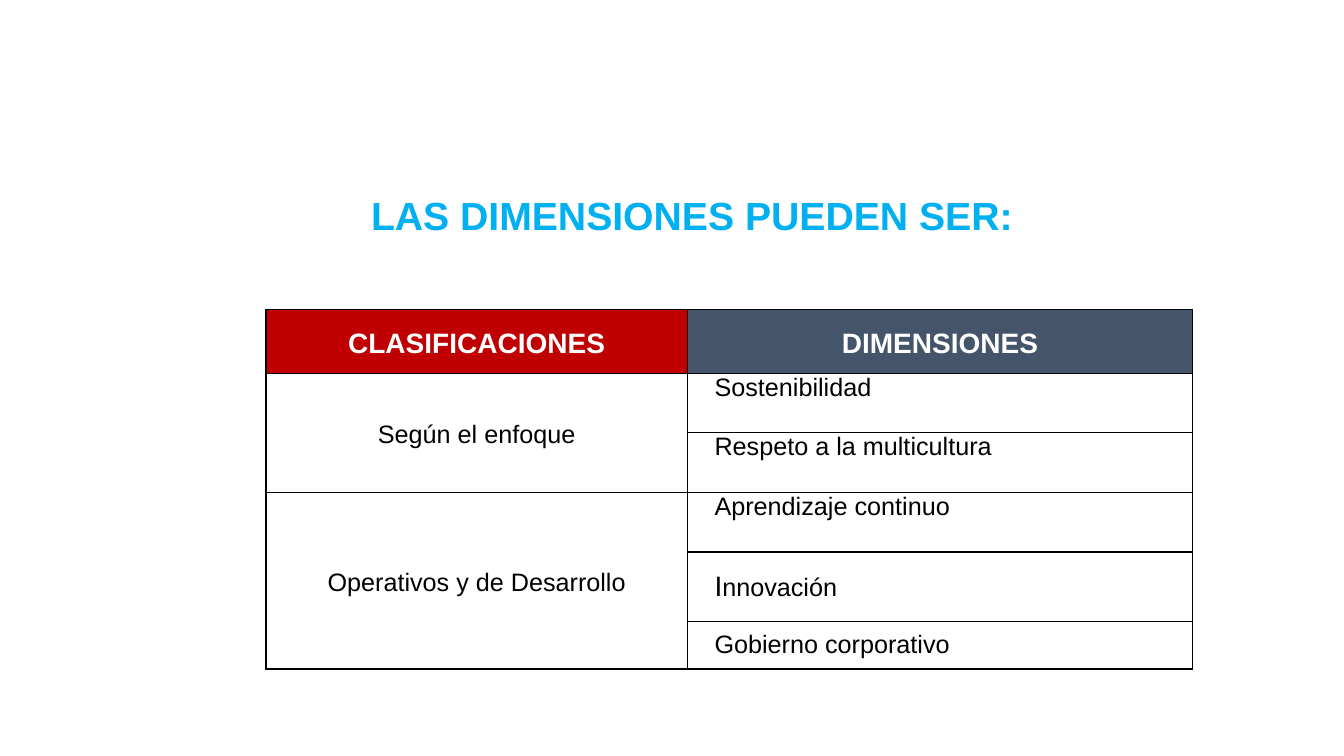
from dataclasses import dataclass

from lxml import etree
from pptx import Presentation
from pptx.dml.color import RGBColor
from pptx.enum.text import MSO_ANCHOR, MSO_AUTO_SIZE, PP_ALIGN
from pptx.oxml.ns import qn
from pptx.util import Pt

TOP, MIDDLE = MSO_ANCHOR.TOP, MSO_ANCHOR.MIDDLE
LEFT, CENTER = PP_ALIGN.LEFT, PP_ALIGN.CENTER
NO_AUTOFIT = MSO_AUTO_SIZE.NONE
TITLE_ONLY_LAYOUT = 5


@dataclass(frozen=True)
class Theme:
    font: str = "Arial"
    title_color: str = "00B0F0"
    header_colors: tuple = ("C00000", "44546A")
    header_text: str = "FFFFFF"
    text: str = "000000"
    border: str = "000000"
    title_size: int = 28
    header_size: int = 20
    body_size: int = 18


class SlideBuilder:
    def __init__(self, slide, theme):
        self.slide = slide
        self.theme = theme

    def format_run(self, run, size, color, bold=False):
        run.font.name = self.theme.font
        run.font.size = Pt(size)
        run.font.bold = bold
        run.font.color.rgb = RGBColor.from_string(color)

    def title(self, text, left, top, width, height):
        shape = self.slide.shapes.title
        shape.left, shape.top = Pt(left), Pt(top)
        shape.width, shape.height = Pt(width), Pt(height)
        frame = shape.text_frame
        frame.text = text
        frame.word_wrap = True
        frame.auto_size = NO_AUTOFIT
        frame.vertical_anchor = TOP
        paragraph = frame.paragraphs[0]
        paragraph.alignment = LEFT
        self.format_run(paragraph.runs[0], self.theme.title_size,
                        self.theme.title_color, bold=True)

    def table(self, left, top, column_widths, row_heights):
        """Add a bordered, unfilled table with no banding."""
        frame = self.slide.shapes.add_table(
            len(row_heights), len(column_widths), Pt(left), Pt(top),
            Pt(sum(column_widths)), Pt(sum(row_heights)))
        table = frame.table
        table.first_row = table.horz_banding = False
        for column, width in zip(table.columns, column_widths):
            column.width = Pt(width)
        for row, height in zip(table.rows, row_heights):
            row.height = Pt(height)
        for cell in table.iter_cells():
            cell.margin_left = cell.margin_right = Pt(5)
            cell.margin_top = cell.margin_bottom = 0
            self.borders(cell)
            cell.fill.background()
        return table

    def borders(self, cell):
        properties = cell._tc.get_or_add_tcPr()
        for side in ("a:lnL", "a:lnR", "a:lnT", "a:lnB"):
            line = etree.SubElement(properties, qn(side), w=str(Pt(1)))
            fill = etree.SubElement(line, qn("a:solidFill"))
            etree.SubElement(fill, qn("a:srgbClr"), val=self.theme.border)

    def centered_cell(self, cell, text, size, color, bold=False):
        cell.vertical_anchor = MIDDLE
        paragraph = cell.text_frame.paragraphs[0]
        paragraph.text = text
        paragraph.alignment = CENTER
        paragraph.line_spacing = 1.15
        self.format_run(paragraph.runs[0], size, color, bold)

    def header_cell(self, cell, text, fill):
        cell.fill.solid()
        cell.fill.fore_color.rgb = RGBColor.from_string(fill)
        self.centered_cell(cell, text, self.theme.header_size,
                           self.theme.header_text, bold=True)

    def indented_cell(self, cell, pieces, anchor):
        """Fill a cell with (text, size) pieces on one indented line."""
        cell.vertical_anchor = anchor
        paragraph = cell.text_frame.paragraphs[0]
        paragraph.alignment = LEFT
        paragraph._p.get_or_add_pPr().set("marL", str(Pt(14.4)))
        for text, size in pieces:
            run = paragraph.add_run()
            run.text = text
            self.format_run(run, size, self.theme.text)


def main():
    theme = Theme()
    presentation = Presentation()
    presentation.slide_width, presentation.slide_height = Pt(960), Pt(540)
    layout = presentation.slide_layouts[TITLE_ONLY_LAYOUT]
    builder = SlideBuilder(presentation.slides.add_slide(layout), theme)

    builder.title("LAS DIMENSIONES PUEDEN SER:", 257.8, 133.2, 499.7, 63.4)

    body, large = theme.body_size, theme.header_size
    headers = ("CLASIFICACIONES", "DIMENSIONES")
    groups = (
        ("Según el enfoque", (
            ([("Sostenibilidad", body)], TOP),
            ([("Respeto a la multicultura", body)], TOP))),
        ("Operativos y de Desarrollo", (
            ([("Aprendizaje continuo", body)], TOP),
            ([("I", large), ("nnovación", body)], MIDDLE),
            ([("Gobierno corporativo", body)], MIDDLE))),
    )
    table = builder.table(190, 221, (301, 361),
                          (45.6, 42.6, 42.6, 42.6, 49.4, 34.2))
    for column, (text, fill) in enumerate(zip(headers, theme.header_colors)):
        builder.header_cell(table.cell(0, column), text, fill)

    first_row = 1
    for classification, dimensions in groups:
        last_row = first_row + len(dimensions) - 1
        group_cell = table.cell(first_row, 0)
        group_cell.merge(table.cell(last_row, 0))
        builder.centered_cell(group_cell, classification, body, theme.text)
        for row, (pieces, anchor) in enumerate(dimensions, first_row):
            builder.indented_cell(table.cell(row, 1), pieces, anchor)
        first_row = last_row + 1

    presentation.save("out.pptx")


if __name__ == "__main__":
    main()
